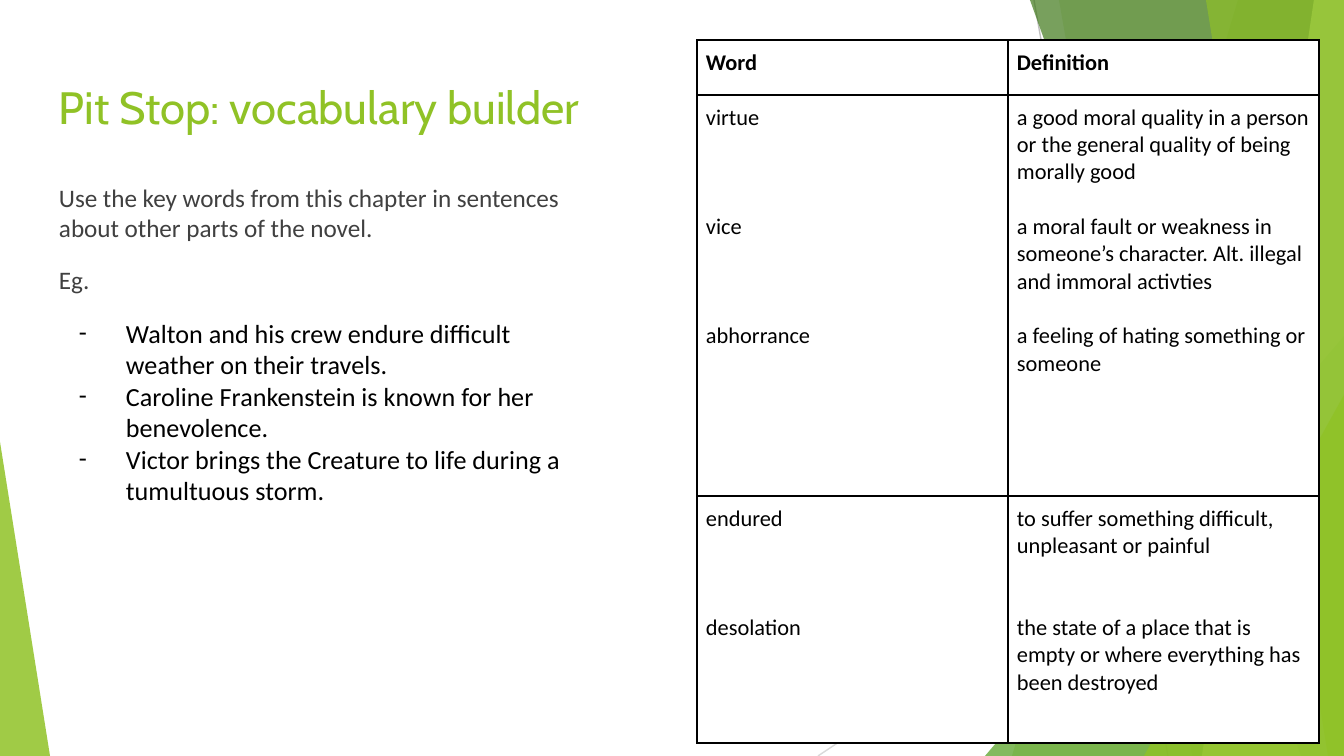
from dataclasses import dataclass

from lxml.etree import SubElement
from pptx import Presentation
from pptx.dml.color import RGBColor
from pptx.enum.shapes import MSO_CONNECTOR as Connector, MSO_SHAPE as Shape
from pptx.enum.text import MSO_ANCHOR as Anchor, MSO_AUTO_SIZE as AutoSize, PP_ALIGN as Align
from pptx.oxml.ns import qn
from pptx.util import Pt

SLIDE_WIDTH, SLIDE_HEIGHT = 1344, 756
EMU_PER_PX = 9144000 / SLIDE_WIDTH


@dataclass(frozen=True)
class Theme:
    green: str = "90C226"
    leaf: str = "54A021"
    forest: str = "3F7819"
    lime: str = "C0E474"
    grey: str = "404040"
    black: str = "000000"
    white: str = "FFFFFF"
    title_font: str = "Cabin"
    body_font: str = "Calibri"
    title_size: float = 24.3
    intro_size: float = 13.5
    example_size: float = 14
    table_size: float = 12
    table_line: float = 14.65


theme = Theme()


def px(*lengths):
    """Turn pixel lengths into a list of whole EMU."""
    return [round(length * EMU_PER_PX) for length in lengths]


def style(paragraph, size, color, font=theme.body_font, bold=False):
    paragraph.alignment = Align.LEFT
    for run in paragraph.runs:
        run.font.name = font
        run.font.size = Pt(size)
        run.font.bold = bold
        run.font.color.rgb = RGBColor.from_string(color)


presentation = Presentation()
presentation.slide_width, presentation.slide_height = px(SLIDE_WIDTH, SLIDE_HEIGHT)
slide = presentation.slides.add_slide(presentation.slide_layouts[5])
shapes = slide.shapes

# Thin background lines
for ends, color in [((1034, 0, 1168, 756), "BFBFBF"), ((1344, 406, 818, 756), "D9D9D9")]:
    connector = shapes.add_connector(Connector.STRAIGHT, *px(*ends))
    connector.line.color.rgb = RGBColor.from_string(color)
    connector.line.width = Pt(0.75)
    SubElement(connector._element.spPr, qn("a:effectLst"))

# Green facets: a band is (top x, bottom x) reaching to the right edge,
# a triangle is (left, top, width, height, apex position)
facets = [
    ((1238, 1012), theme.green, 30),
    ((1059, 1192), theme.green, 20),
    ((985, 336, 359, 420, 1), theme.leaf, 72),
    ((1030, 1301), theme.forest, 70),
    ((1314, 1202), theme.lime, 70),
    ((1206, 1328), theme.green, 65),
    ((1144, 395, 200, 361, 1), theme.green, 80),
    ((0, 442, 50, 314, 0), theme.green, 85),
]
for geometry, color, opacity in facets:
    if len(geometry) == 2:
        top_x, bottom_x = geometry
        builder = shapes.build_freeform(top_x, 0, scale=EMU_PER_PX)
        builder.add_line_segments(
            [(SLIDE_WIDTH, 0), (SLIDE_WIDTH, SLIDE_HEIGHT), (bottom_x, SLIDE_HEIGHT)])
        facet = builder.convert_to_shape()
    else:
        *box, apex = geometry
        facet = shapes.add_shape(Shape.ISOSCELES_TRIANGLE, *px(*box))
        facet.adjustments[0] = apex
    facet.shadow.inherit = False
    facet.fill.solid()
    facet.fill.fore_color.rgb = RGBColor.from_string(color)
    facet.line.fill.background()
    fill_color = facet._element.spPr.find(f"{qn('a:solidFill')}/{qn('a:srgbClr')}")
    SubElement(fill_color, qn("a:alpha"), val=str(opacity * 1000))

# Title, brought in front of the facets
title = shapes.title
shapes._spTree.append(title._element)
title.left, title.top, title.width, title.height = px(46, 66, 1252, 85)
title.text_frame.text = "Pit Stop: vocabulary builder"
style(title.text_frame.paragraphs[0], theme.title_size, theme.green, theme.title_font)

# Task and examples
body = shapes.add_textbox(*px(46, 169, 531, 503))
for frame in (title.text_frame, body.text_frame):
    frame.word_wrap = True
    frame.auto_size = AutoSize.NONE
    frame.vertical_anchor = Anchor.TOP
    frame.margin_left, frame.margin_top, frame.margin_right, frame.margin_bottom = px(13, 13, 13, 13)

intro = ["Use the key words from this chapter in sentences about other parts of the novel.", "Eg."]
examples = [
    "Walton and his crew endure difficult weather on their travels.",
    "Caroline Frankenstein is known for her benevolence.",
    "Victor brings the Creature to life during a tumultuous storm.",
]
for index, text in enumerate(intro + examples):
    frame = body.text_frame
    paragraph = frame.add_paragraph() if index else frame.paragraphs[0]
    paragraph.text = text
    paragraph.space_before = Pt(12 if index in (1, 2) else 0)
    if index < len(intro):
        style(paragraph, theme.intro_size, theme.grey)
        continue
    properties = paragraph._p.get_or_add_pPr()
    indent, hanging = px(67, -47)
    properties.set("marL", str(indent))
    properties.set("indent", str(hanging))
    bullet_color = SubElement(properties, qn("a:buClr"))
    SubElement(bullet_color, qn("a:srgbClr"), val=theme.black)
    SubElement(properties, qn("a:buFont"), typeface=theme.body_font)
    SubElement(properties, qn("a:buChar"), char="-")
    style(paragraph, theme.example_size, theme.black)

# Vocabulary table: each cell holds its entries and the lines left free between them
vocabulary = [
    [(["Word"], 0), (["Definition"], 0)],
    [
        (["virtue", "vice", "abhorrance"], 3),
        (["a good moral quality in a person or the general quality of being morally good",
          "a moral fault or weakness in someone’s character. Alt. illegal and immoral activties",
          "a feeling of hating something or someone"], 1),
    ],
    [
        (["endured", "desolation"], 3),
        (["to suffer something difficult, unpleasant or painful",
          "the state of a place that is empty or where everything has been destroyed"], 2),
    ],
]
row_heights = px(55, 401, 247)
column_width, = px(311)
table = shapes.add_table(3, 2, *px(697, 40, 622, 703)).table
table.first_row = False
table.horz_banding = False
for column in table.columns:
    column.width = column_width

for row_index, row in enumerate(vocabulary):
    table.rows[row_index].height = row_heights[row_index]
    for column_index, (entries, free_lines) in enumerate(row):
        cell = table.cell(row_index, column_index)
        cell.margin_left, cell.margin_top, cell.margin_right, cell.margin_bottom = px(9, 9, 9, 9)
        cell.vertical_anchor = Anchor.TOP
        cell.text_frame.text = "\n".join(entries)
        for index, paragraph in enumerate(cell.text_frame.paragraphs):
            paragraph.space_before = Pt(free_lines * theme.table_line if index else 0)
            style(paragraph, theme.table_size, theme.black, bold=row_index == 0)
        cell_properties = cell._tc.get_or_add_tcPr()
        for side in ("lnL", "lnR", "lnT", "lnB"):
            border = SubElement(cell_properties, qn(f"a:{side}"), w=str(Pt(1)))
            border_fill = SubElement(border, qn("a:solidFill"))
            SubElement(border_fill, qn("a:srgbClr"), val=theme.black)
        cell.fill.solid()
        cell.fill.fore_color.rgb = RGBColor.from_string(theme.white)

presentation.save("out.pptx")
